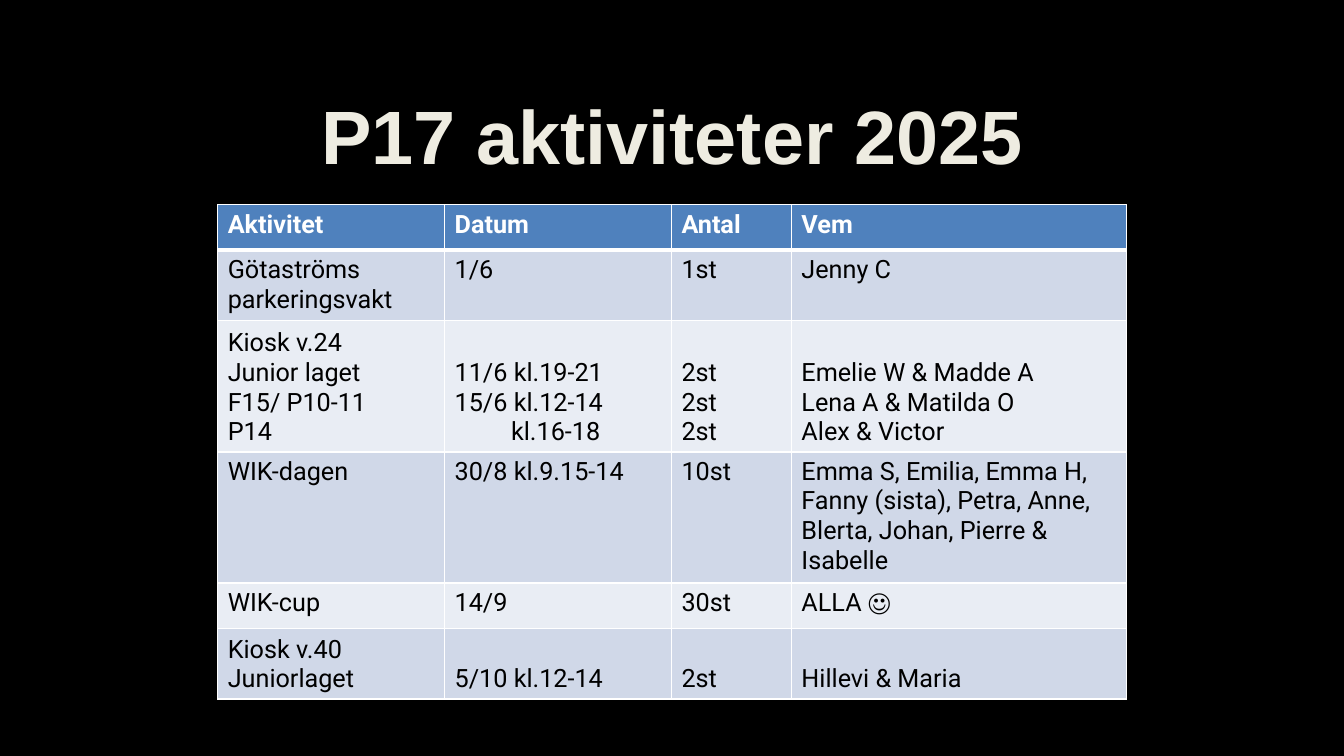
from lxml import etree
from pptx import Presentation, util as u
from pptx.dml.color import RGBColor
from pptx.enum import text
from pptx.oxml import parse_xml
from pptx.oxml.ns import nsdecls, qn


def rgb(hex_colour):
    return RGBColor.from_string(hex_colour)


class ActivitySlide:
    WIDTH, HEIGHT = 13.33, 7.5
    WHITE, BLACK, CREAM = "FFFFFF", "000000", "EEECE1"
    HEADER, BANDS = "4F81BD", ("E9EDF4", "D0D8E8")
    TITLE_FONT, BODY_FONT = "Arial", "Roboto"

    def __init__(self, deck):
        deck.slide_width, deck.slide_height = u.Inches(self.WIDTH), u.Inches(self.HEIGHT)
        self.slide = deck.slides.add_slide(deck.slide_layouts[6])
        background = self.slide.background.fill
        background.solid()
        background.fore_color.rgb = rgb(self.BLACK)

    def place(self, left, top, width, height):
        return [u.Inches(share * side) for share, side in
                zip((left, top, width, height), (self.WIDTH, self.HEIGHT) * 2)]

    def set_font(self, font, name, size, colour, bold=False):
        font.name, font.size, font.bold = name, u.Pt(size), bold
        font.color.rgb = rgb(colour)

    def title(self, wording, *box):
        frame = self.slide.shapes.add_textbox(*self.place(*box)).text_frame
        frame.word_wrap = True
        frame.vertical_anchor = text.MSO_ANCHOR.BOTTOM
        heading = frame.paragraphs[0]
        heading.alignment = text.PP_ALIGN.CENTER
        run = heading.add_run()
        run.text = wording
        self.set_font(run.font, self.TITLE_FONT, 54, self.CREAM, True)
        run.font._element.insert(0, parse_xml(
            f'<a:ln {nsdecls("a")} w="9525"><a:solidFill><a:srgbClr val="404040">'
            '<a:alpha val="10000"/></a:srgbClr></a:solidFill></a:ln>'))

    def borders(self, cell, top, bottom):
        properties = cell._tc.get_or_add_tcPr()
        for place, (side, points) in enumerate(zip("LRTB", (1, 1, top, bottom))):
            line = etree.Element(qn(f"a:ln{side}"), w=str(u.Pt(points)))
            fill = etree.SubElement(line, qn("a:solidFill"))
            etree.SubElement(fill, qn("a:srgbClr"), val=self.WHITE)
            properties.insert(place, line)

    def cell(self, cell, wording, row):
        header = row == 0
        cell.fill.solid()
        cell.fill.fore_color.rgb = rgb(self.HEADER if header else self.BANDS[row % 2])
        self.borders(cell, 3 if row == 1 else 1, 3 if header else 1)
        if wording.startswith("Kiosk") or row in KIOSK_ROWS:
            cell.vertical_anchor = text.MSO_ANCHOR.BOTTOM
        cell.text_frame.text = wording
        for paragraph in cell.text_frame.paragraphs:
            if paragraph.text.startswith("kl."):
                paragraph._p.get_or_add_pPr().set("marL", str(u.Inches(0.56)))
            self.set_font(paragraph.font, self.BODY_FONT, 18,
                          self.WHITE if header else self.BLACK, header)

    def table(self, rows, widths, heights, *box):
        table = self.slide.shapes.add_table(len(rows), len(widths), *self.place(*box)).table
        for column, width in zip(table.columns, widths):
            column.width = u.Inches(width)
        for number, (row, height) in enumerate(zip(rows, heights)):
            table.rows[number].height = u.Inches(height)
            for column, wording in enumerate(row):
                self.cell(table.cell(number, column), wording, number)


ACTIVITIES = [
    ("Aktivitet", "Datum", "Antal", "Vem"),
    ("Götaströms parkeringsvakt", "1/6", "1st", "Jenny C"),
    ("Kiosk v.24\nJunior laget\nF15/ P10-11\nP14",
     "11/6 kl.19-21\n15/6 kl.12-14\nkl.16-18",
     "2st\n2st\n2st",
     "Emelie W & Madde A\nLena A & Matilda O\nAlex & Victor"),
    ("WIK-dagen", "30/8 kl.9.15-14", "10st",
     "Emma S, Emilia, Emma H, Fanny (sista), Petra, Anne, "
     "Blerta, Johan, Pierre & Isabelle"),
    ("WIK-cup", "14/9", "30st", "ALLA ☺"),
    ("Kiosk v.40\nJuniorlaget", "5/10 kl.12-14", "2st", "Hillevi & Maria"),
]
KIOSK_ROWS = [number for number, row in enumerate(ACTIVITIES) if row[0].startswith("Kiosk")]


def main():
    deck = Presentation()
    plan = ActivitySlide(deck)
    plan.title("P17 aktiviteter 2025", 0.08, -0.02, 0.84, 0.264)
    plan.table(ACTIVITIES, (2.25, 2.25, 1.19, 3.32), (0.45, 0.69, 1.27, 1.27, 0.45, 0.69),
               0.162, 0.271, 0.676, 0.643)
    deck.save("out.pptx")


if __name__ == "__main__":
    main()
